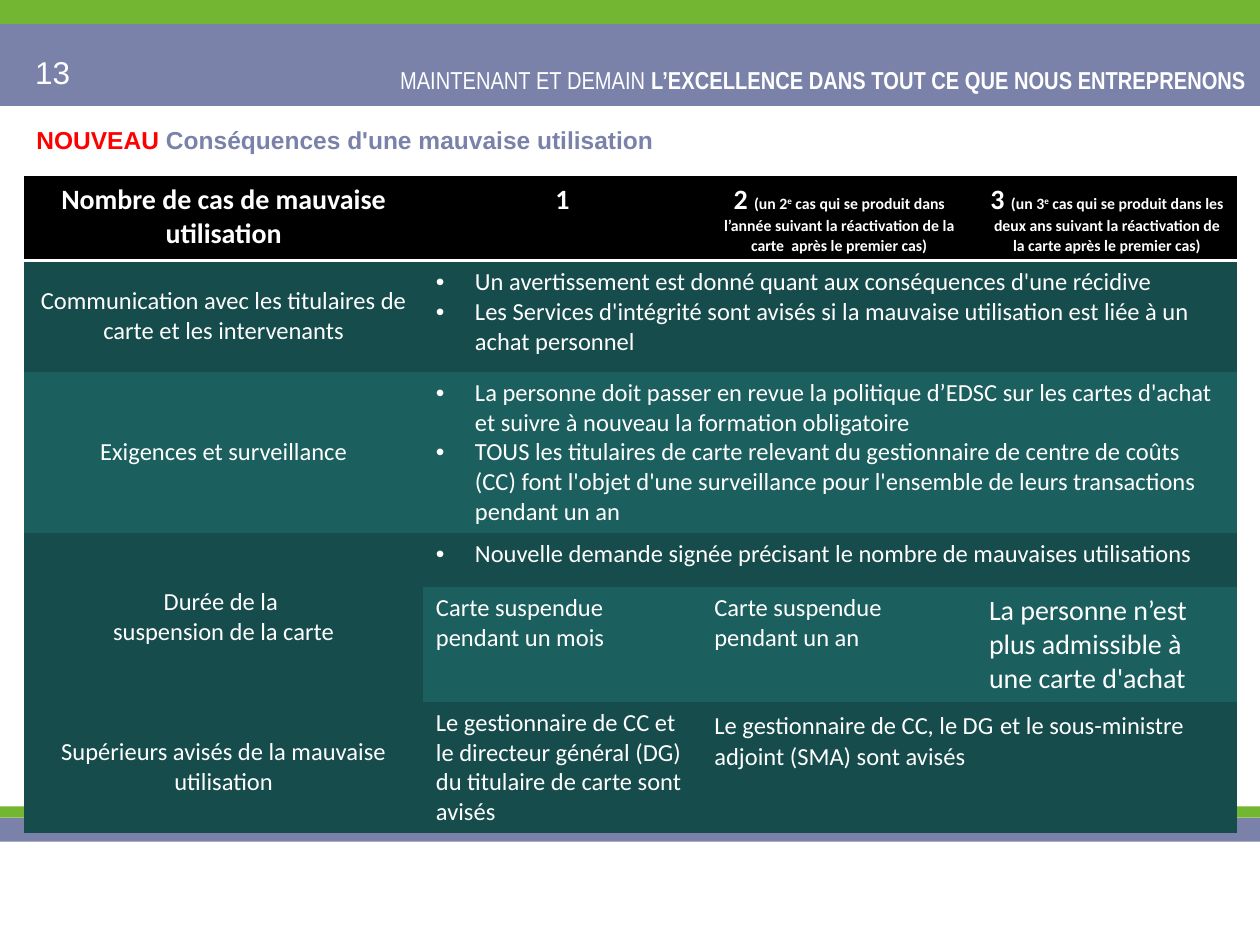
from dataclasses import dataclass
from typing import Optional

from lxml.etree import SubElement
from pptx import Presentation
from pptx.dml.color import RGBColor
from pptx.enum.shapes import MSO_SHAPE as Shape
from pptx.enum.text import MSO_ANCHOR as Anchor, PP_ALIGN as Align
from pptx.oxml.ns import qn
from pptx.util import Inches, Pt

COLORS = {
    "white": "FFFFFF", "black": "000000", "red": "FF0000",
    "slate": "7A82AA", "green": "73B632", "dark": "164C4C", "teal": "1C5F5F",
}
NO_GRID_STYLE = "{2D5ABB26-0587-4C30-8999-92F81FD0307C}"


@dataclass(frozen=True)
class Run:
    text: str
    size: Optional[float] = None
    bold: Optional[bool] = None
    color: Optional[str] = None
    raised: bool = False


@dataclass(frozen=True)
class Band:
    top: float
    height: float
    color: str


@dataclass(frozen=True)
class Cell:
    row: int
    col: int
    paragraphs: tuple
    fill: str = "dark"
    label: bool = False
    bullet: bool = False
    bold: bool = False
    size: float = 14
    rows: int = 1
    cols: int = 1


def rgb(name: str) -> RGBColor:
    return RGBColor.from_string(COLORS[name])


def add_bullet(p) -> None:
    pPr = p._p.get_or_add_pPr()
    pPr.set("marL", str(Inches(0.31)))
    pPr.set("indent", str(-Inches(0.31)))
    SubElement(pPr, qn("a:buFont")).set("typeface", "Arial")
    SubElement(pPr, qn("a:buChar")).set("char", "•")


def write(tf, paragraphs: tuple, *, font: str = "Calibri", size: float = 14,
          color: str = "white", bold: bool = False, align=Align.LEFT,
          bullet: bool = False) -> None:
    tf.word_wrap = True
    for i, content in enumerate(paragraphs):
        p = tf.paragraphs[0] if i == 0 else tf.add_paragraph()
        p.alignment = align
        if bullet:
            add_bullet(p)
        for run in (Run(content),) if isinstance(content, str) else content:
            r = p.add_run()
            r.text = run.text
            r.font.name = font
            r.font.size = Pt(run.size or size)
            r.font.bold = bold if run.bold is None else run.bold
            r.font.color.rgb = rgb(run.color or color)
            if run.raised:
                r.font._element.set("baseline", "30000")


def add_band(slide, band: Band) -> None:
    s = slide.shapes.add_shape(Shape.RECTANGLE, 0, Inches(band.top),
                               Inches(10), Inches(band.height))
    s.shadow.inherit = False
    s.fill.solid()
    s.fill.fore_color.rgb = rgb(band.color)
    s.line.fill.background()


def add_text(slide, box: tuple, paragraphs: tuple, anchor=Anchor.TOP, **fmt) -> None:
    tf = slide.shapes.add_textbox(*map(Inches, box)).text_frame
    tf.vertical_anchor = anchor
    write(tf, paragraphs, **fmt)


def underline_cell(cell, color: str, width: float) -> None:
    tcPr = cell._tc.get_or_add_tcPr()
    ln = tcPr.makeelement(qn("a:lnB"), {"w": str(Pt(width))})
    tcPr.insert(0, ln)
    fill = SubElement(ln, qn("a:solidFill"))
    SubElement(fill, qn("a:srgbClr")).set("val", COLORS[color])


def add_grid(slide, left: float, top: float, widths: list, heights: list, cells: list) -> None:
    frame = slide.shapes.add_table(len(heights), len(widths), Inches(left), Inches(top),
                                   Inches(sum(widths)), Inches(sum(heights)))
    table = frame.table
    table._tbl.tblPr.find(qn("a:tableStyleId")).text = NO_GRID_STYLE
    table.horz_banding = False
    for column, width in zip(table.columns, widths):
        column.width = Inches(width)
    for row, height in zip(table.rows, heights):
        row.height = Inches(height)
    for item in cells:
        last_row, last_col = item.row + item.rows, item.col + item.cols
        cell = table.cell(item.row, item.col)
        if item.rows * item.cols > 1:
            cell.merge(table.cell(last_row - 1, last_col - 1))
        for row in range(item.row, last_row):
            for col in range(item.col, last_col):
                part = table.cell(row, col)
                part.fill.solid()
                part.fill.fore_color.rgb = rgb(item.fill)
        header = item.row == 0
        cell.vertical_anchor = Anchor.MIDDLE if item.label else Anchor.TOP
        write(cell.text_frame, item.paragraphs, size=item.size, bold=item.bold,
              align=Align.CENTER if header or item.label else Align.LEFT,
              bullet=item.bullet)
        if header:
            underline_cell(cell, "white", 2)


def header_cell(col: int, *runs: Run) -> Cell:
    return Cell(0, col, (runs,), "black", bold=True, size=16)


def case_header(col: int, number: int, note: str) -> Cell:
    return header_cell(col, Run(f"{number} "), Run(f"(un {number}", 9),
                       Run("e", 9, raised=True), Run(f" cas qui se produit dans {note}", 9))


BANDS = [Band(0.19, 0.65, "slate"), Band(0, 0.19, "green"),
         Band(6.49, 0.19, "slate"), Band(6.4, 0.09, "green")]

CELLS = [
    header_cell(0, Run("Nombre de cas de mauvaise utilisation")),
    header_cell(1, Run("1")),
    case_header(2, 2, "l’année suivant la réactivation de la carte  après le premier cas)"),
    case_header(3, 3, "les deux ans suivant la réactivation de la carte après le premier cas)"),
    Cell(1, 0, ("Communication avec les titulaires de carte et les intervenants",), label=True),
    Cell(1, 1, (
        "Un avertissement est donné quant aux conséquences d'une récidive",
        "Les Services d'intégrité sont avisés si la mauvaise utilisation est liée à un "
        "achat personnel"), bullet=True, cols=3),
    Cell(2, 0, ("Exigences et surveillance",), "teal", label=True),
    Cell(2, 1, (
        "La personne doit passer en revue la politique d’EDSC sur les cartes d'achat "
        "et suivre à nouveau la formation obligatoire",
        "TOUS les titulaires de carte relevant du gestionnaire de centre de coûts (CC) "
        "font l'objet d'une surveillance pour l'ensemble de leurs transactions "
        "pendant un an"), "teal", bullet=True, cols=3),
    Cell(3, 0, ("Durée de la ", "suspension de la carte"), label=True, rows=2),
    Cell(3, 1, ("Nouvelle demande signée précisant le nombre de mauvaises utilisations",),
         bullet=True, cols=3),
    Cell(4, 1, ("Carte suspendue pendant un mois",), "teal"),
    Cell(4, 2, ("Carte suspendue pendant un an",), "teal"),
    Cell(4, 3, ("La personne n’est plus admissible à une carte d'achat",), "teal", size=16),
    Cell(5, 0, ("Supérieurs avisés de la mauvaise utilisation",), label=True),
    Cell(5, 1, ("Le gestionnaire de CC et le directeur général (DG) du titulaire de carte "
                "sont avisés",)),
    Cell(5, 2, ((Run("Le gestionnaire de CC, le DG"), Run(" ", 16),
                 Run("et le sous-ministre adjoint (SMA) sont avisés")),), cols=2),
]


def main() -> None:
    prs = Presentation()
    prs.slide_width, prs.slide_height = Inches(10), Inches(7.5)
    slide = prs.slides.add_slide(prs.slide_layouts[6])
    for band in BANDS:
        add_band(slide, band)
    add_text(slide, (0.18, 0.37, 2.33, 0.4), ("13",), font="Arial", size=18)
    add_text(slide, (2.75, 0.47, 7.24, 0.34),
             ((Run("MAINTENANT ET DEMAIN "),
               Run("L’EXCELLENCE DANS TOUT CE QUE NOUS ENTREPRENONS", bold=True)),),
             font="Arial Narrow", align=Align.RIGHT)
    add_text(slide, (0.19, 0.9, 9.63, 0.41),
             ((Run("NOUVEAU", color="red"), Run(" Conséquences d'une mauvaise utilisation")),),
             anchor=Anchor.MIDDLE, font="Arial", color="slate", bold=True)
    add_grid(slide, 0.19, 1.4, [3.17, 2.21, 2.18, 2.07],
             [0.67, 0.88, 1.28, 0.43, 0.91, 1.04], CELLS)
    prs.save("out.pptx")


if __name__ == "__main__":
    main()
